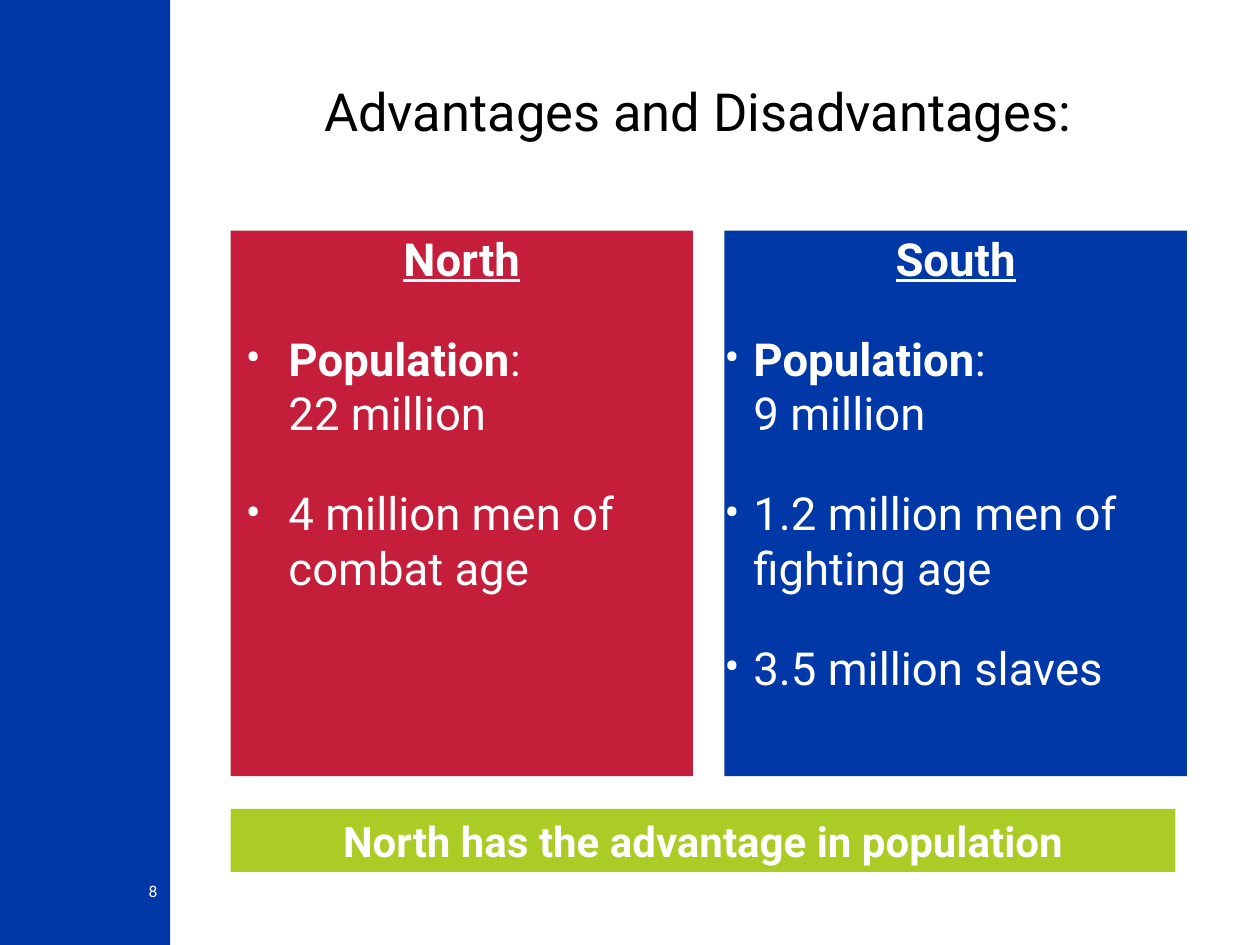
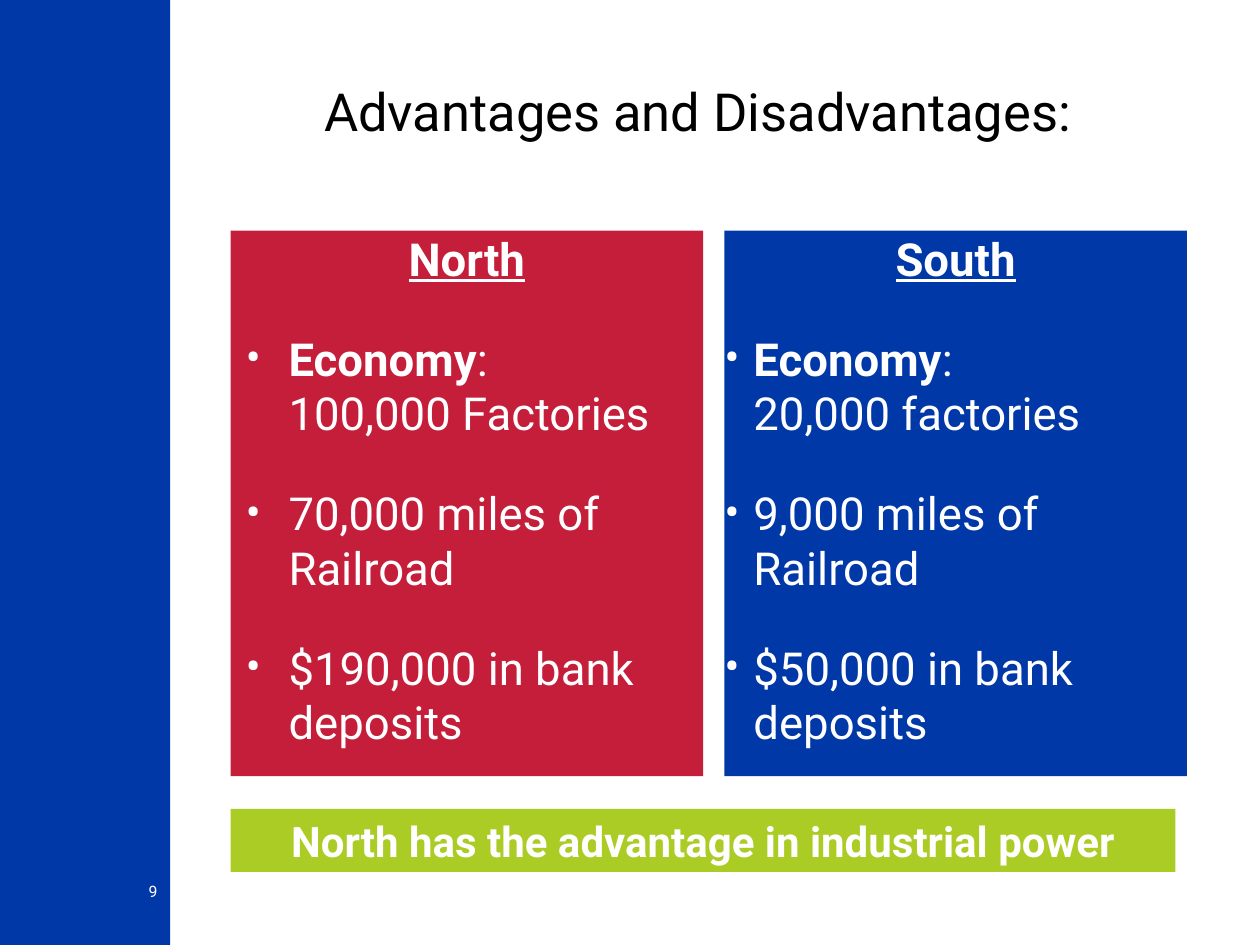
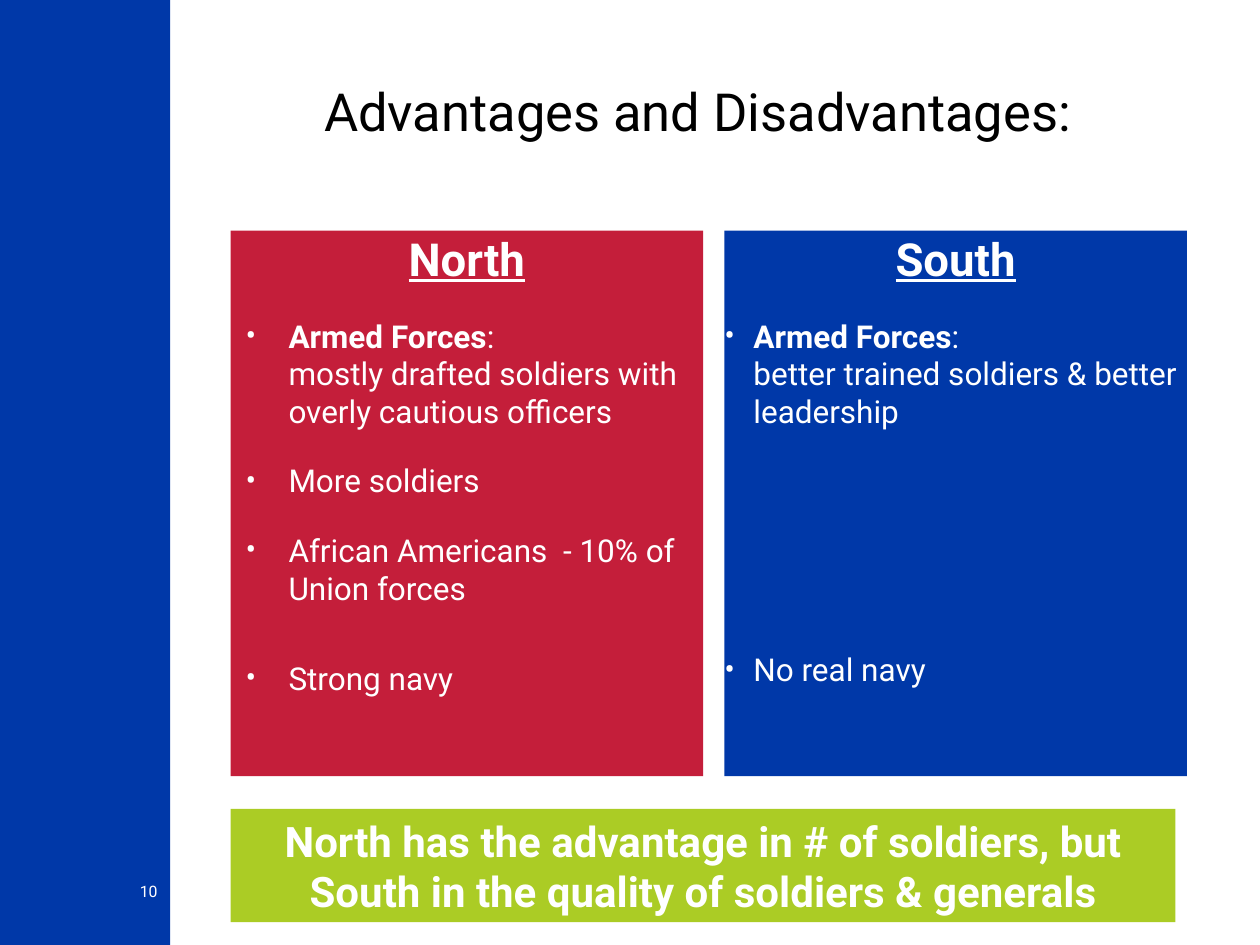
import pptx
import pptx.util
import pptx.dml.color
import pptx.enum.shapes
import pptx.enum.text
import pptx.oxml.ns
import lxml.etree

Inches = pptx.util.Inches
Pt = pptx.util.Pt
ALIGN = pptx.enum.text.PP_ALIGN
ANCHOR = pptx.enum.text.MSO_ANCHOR

FONT = "Roboto"
COLORS = {"blue": "0038A8", "red": "C41E3A", "green": "ABCC25",
          "white": "FFFFFF", "black": "000000"}
TITLE = "Advantages and Disadvantages:"
LEFT = 1.83
PANEL_TOP, PANEL_HEIGHT = 1.83, 4.33
HEADING_SIZE = 26

# Per side: left edge, fill, text indent and bullet hang in inches
SIDES = {
    "North": {"left": LEFT, "fill": "red", "indent": 0.46, "hang": 0.34},
    "South": {"left": 5.75, "fill": "blue", "indent": 0.23, "hang": 0.23},
}

# Each bullet: bold label, lines of text, optional space before in points
SLIDES = [
    {"number": 8, "size": 26, "north_width": 3.67, "banner_height": 0.5,
     "banner": "North has the advantage in population",
     "North": [("Population", [": ", "22 million"]),
               ("", ["4 million men of combat age"])],
     "South": [("Population", [": ", "9 million"]),
               ("", ["1.2 million men of fighting age"]),
               ("", ["3.5 million slaves"])]},
    {"number": 9, "size": 26, "north_width": 3.75, "banner_height": 0.5,
     "banner": "North has the advantage in industrial power",
     "North": [("Economy", [":", "100,000 Factories"]),
               ("", ["70,000 miles of Railroad"]),
               ("", ["$190,000 in bank deposits"])],
     "South": [("Economy", [": ", "20,000 factories"]),
               ("", ["9,000 miles of Railroad"]),
               ("", ["$50,000 in bank deposits"])]},
    {"number": 10, "size": 18, "north_width": 3.75, "banner_height": 0.9,
     "banner": "North has the advantage in # of soldiers, but "
               "South in the quality of soldiers & generals",
     "North": [("Armed Forces", [":", "mostly drafted soldiers with overly "
                                 "cautious officers"]),
               ("", ["More soldiers"]),
               ("", ["African Americans  - 10% of Union forces"]),
               ("", ["Strong navy"], 30)],
     "South": [("Armed Forces", [": ", "better trained soldiers & better "
                                 "leadership"]),
               ("", ["No real navy"], 126)]},
]


def rgb(name):
    return pptx.dml.color.RGBColor.from_string(COLORS[name])


def style_run(r, size, color="white", bold=False, underline=False):
    r.font.name = FONT
    r.font.size = Pt(size)
    r.font.bold = bold
    r.font.underline = underline
    r.font.color.rgb = rgb(color)


def set_frame(tf, anchor=ANCHOR.TOP, margin=0):
    tf.word_wrap = True
    tf.vertical_anchor = anchor
    tf.margin_left = tf.margin_right = Inches(2 * margin)
    tf.margin_top = tf.margin_bottom = Inches(margin)


def add_rect(s, left, top, width, height, fill):
    sp = s.shapes.add_shape(pptx.enum.shapes.MSO_SHAPE.RECTANGLE,
                            Inches(left), Inches(top),
                            Inches(width), Inches(height))
    sp.shadow.inherit = False
    sp.fill.solid()
    sp.fill.fore_color.rgb = rgb(fill)
    sp.line.fill.background()
    return sp


def write_line(tf, text, size, align, **style):
    p = tf.paragraphs[0]
    p.text = text
    p.alignment = align
    style_run(p.runs[0], size, **style)


def add_label(s, left, top, width, height, text, size, align, color, anchor):
    tf = s.shapes.add_textbox(Inches(left), Inches(top),
                              Inches(width), Inches(height)).text_frame
    set_frame(tf, anchor)
    write_line(tf, text, size, align, color=color)


def add_bullet(tf, side, size, label, lines, space=None):
    p = tf.add_paragraph()
    p.alignment = ALIGN.LEFT
    p.space_before = Pt(space or size)

    # Bullet mark and hanging indent
    pPr = p._p.get_or_add_pPr()
    pPr.set("marL", str(Inches(side["indent"])))
    pPr.set("indent", str(-Inches(side["hang"])))
    qn = pptx.oxml.ns.qn
    lxml.etree.SubElement(pPr, qn("a:buFont")).set("typeface", FONT)
    lxml.etree.SubElement(pPr, qn("a:buChar")).set("char", "•")

    # Bold label, then the lines
    if label:
        r = p.add_run()
        r.text = label
        style_run(r, size, bold=True)
    for i, line in enumerate(lines):
        if i:
            p.add_line_break()
        r = p.add_run()
        r.text = line
        style_run(r, size)


def add_panel(s, name, width, bullets, size):
    side = SIDES[name]
    sp = add_rect(s, side["left"], PANEL_TOP, width, PANEL_HEIGHT, side["fill"])
    tf = sp.text_frame
    set_frame(tf)
    write_line(tf, name, HEADING_SIZE, ALIGN.CENTER, bold=True, underline=True)
    for bullet in bullets:
        add_bullet(tf, side, size, *bullet)


def add_banner(s, text, height):
    tf = add_rect(s, LEFT, 6.42, 7.5, height, "green").text_frame
    set_frame(tf, margin=0.05)
    write_line(tf, text, 24, ALIGN.CENTER, bold=True)


def add_frame(s, number):
    """Side band, slide number and title shared by all slides."""
    add_rect(s, 0, 0, 1.35, 7.5, "blue")
    add_label(s, 0.58, 7, 0.67, 0.33, str(number), 9, ALIGN.RIGHT,
              "white", ANCHOR.TOP)
    add_label(s, LEFT, 0.3, 7.42, 0.83, TITLE, 30, ALIGN.CENTER,
              "black", ANCHOR.BOTTOM)


def main():
    prs = pptx.Presentation()
    prs.slide_width, prs.slide_height = Inches(10), Inches(7.5)
    for content in SLIDES:
        s = prs.slides.add_slide(prs.slide_layouts[6])
        add_frame(s, content["number"])
        add_panel(s, "North", content["north_width"], content["North"],
                  content["size"])
        add_panel(s, "South", 3.67, content["South"], content["size"])
        add_banner(s, content["banner"], content["banner_height"])
    prs.save("out.pptx")


if __name__ == "__main__":
    main()
